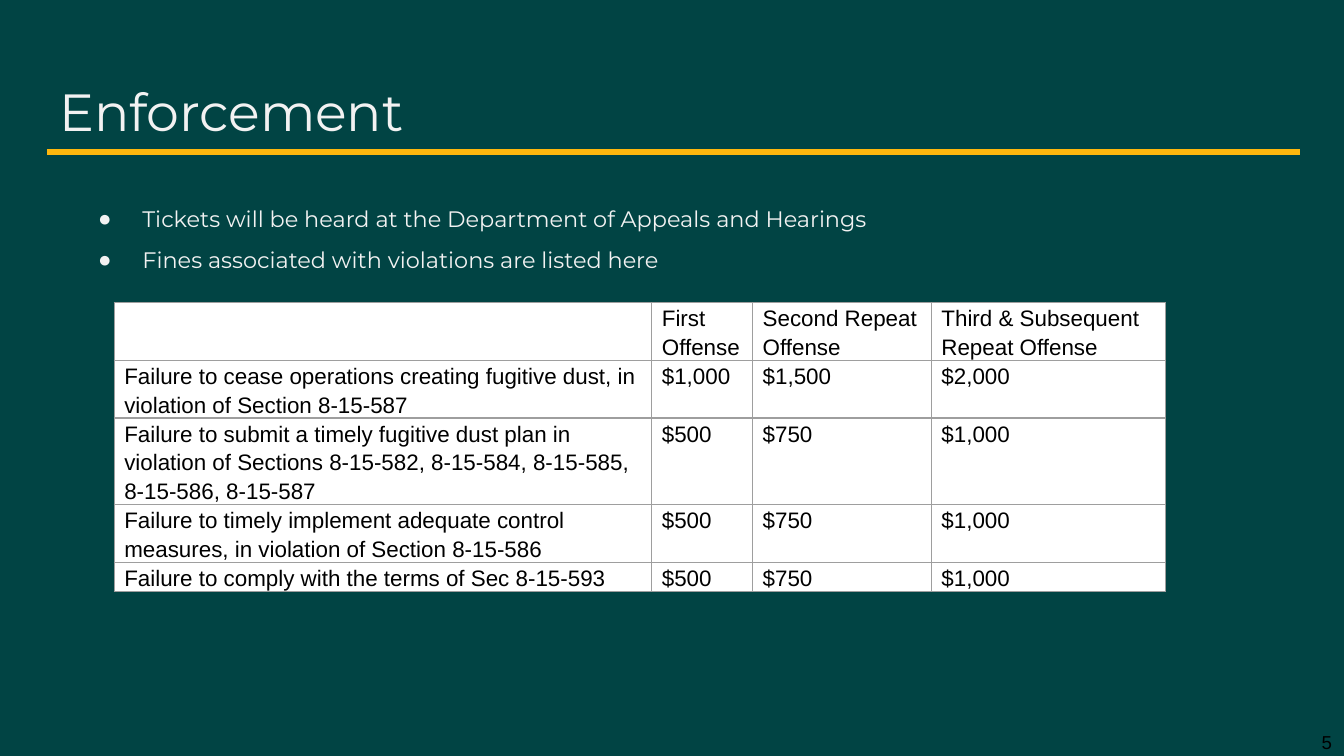
from lxml import etree
from pptx import Presentation
from pptx import util as u
from pptx.dml import color
from pptx.enum import shapes, text
from pptx.oxml import ns

COLORS = {
    "background": "014444",
    "accent": "FEB70D",
    "light": "F2F2F2",
    "dark": "000000",
    "cell": "FFFFFF",
    "border": "9E9E9E",
}
HEADING_FONT = "Montserrat"
TABLE_FONT = "Arial"

BULLETS = [
    "Tickets will be heard at the Department of Appeals and Hearings",
    "Fines associated with violations are listed here",
]
FINES = [
    ["", "First Offense", "Second Repeat Offense", "Third & Subsequent Repeat Offense"],
    ["Failure to cease operations creating fugitive dust, in violation of Section 8-15-587",
     "$1,000", "$1,500", "$2,000"],
    ["Failure to submit a timely fugitive dust plan in violation of Sections 8-15-582, "
     "8-15-584, 8-15-585, 8-15-586, 8-15-587", "$500", "$750", "$1,000"],
    ["Failure to timely implement adequate control measures, in violation of Section 8-15-586",
     "$500", "$750", "$1,000"],
    ["Failure to comply with the terms of Sec 8-15-593", "$500", "$750", "$1,000"],
]
COLUMN_WIDTHS = [4, 0.75, 1.33, 1.74]
ROW_LINES = [2, 2, 3, 2, 1]


def rgb(name):
    return color.RGBColor.from_string(COLORS[name])


def add_xml(parent, tag, **attributes):
    return etree.SubElement(parent, ns.qn(tag), **attributes)


def add_color(parent, tag, name):
    add_xml(add_xml(parent, tag), "a:srgbClr", val=COLORS[name])


def style_runs(paragraph, font_name, size, color_name):
    for run in paragraph.runs:
        run.font.name = font_name
        run.font.size = u.Pt(size)
        run.font.color.rgb = rgb(color_name)


def place(region, box, anchor):
    region.left, region.top, region.width, region.height = map(u.Inches, box)
    frame = region.text_frame
    frame.word_wrap = True
    frame.auto_size = text.MSO_AUTO_SIZE.NONE
    frame.vertical_anchor = anchor
    frame.margin_left = frame.margin_right = u.Inches(0.1)
    frame.margin_top = frame.margin_bottom = u.Inches(0.1)
    return frame


def add_heading(slide, box):
    left, top, width, height = box
    frame = place(slide.shapes.title, box, text.MSO_ANCHOR.TOP)
    frame.text = "Enforcement"
    heading = frame.paragraphs[0]
    heading.alignment = text.PP_ALIGN.LEFT
    style_runs(heading, HEADING_FONT, 28, "light")

    rule_y = u.Inches(top + height + 0.01)
    rule = slide.shapes.add_connector(
        shapes.MSO_CONNECTOR.STRAIGHT,
        u.Inches(left + 0.01), rule_y, u.Inches(left + width + 0.01), rule_y)
    rule.line.color.rgb = rgb("accent")
    rule.line.width = u.Pt(3)
    add_xml(rule._element.spPr, "a:effectLst")


def add_bullets(slide, box):
    frame = place(slide.placeholders[1], box, text.MSO_ANCHOR.TOP)
    frame.text = "\n".join(BULLETS)
    for bullet in frame.paragraphs:
        properties = bullet._p.get_or_add_pPr()
        properties.set("marL", str(u.Inches(0.5)))
        properties.set("indent", str(u.Inches(-0.33)))
        add_color(properties, "a:buClr", "light")
        add_xml(properties, "a:buFont", typeface=TABLE_FONT)
        add_xml(properties, "a:buChar", char="●")
        bullet.line_spacing = 1.5
        bullet.space_before = u.Pt(0)
        style_runs(bullet, HEADING_FONT, 12, "light")


def style_cell(cell):
    cell.margin_left = cell.margin_right = u.Pt(5.4)
    cell.margin_top = cell.margin_bottom = 0
    properties = cell._tc.get_or_add_tcPr()
    for side in ("a:lnL", "a:lnR", "a:lnT", "a:lnB"):
        add_color(add_xml(properties, side, w=str(u.Pt(0.75))), "a:solidFill", "border")
    cell.fill.solid()
    cell.fill.fore_color.rgb = rgb("cell")
    entry = cell.text_frame.paragraphs[0]
    entry.line_spacing = 1.15
    style_runs(entry, TABLE_FONT, 12, "dark")


def add_fines(slide, box):
    left, top, width, height = box
    fines = slide.shapes.add_table(
        len(FINES), len(COLUMN_WIDTHS), *map(u.Inches, box)).table
    for column, column_width in zip(fines.columns, COLUMN_WIDTHS):
        column.width = u.Inches(column_width)
    for row, lines, entries in zip(fines.rows, ROW_LINES, FINES):
        row.height = u.Inches(height * lines / sum(ROW_LINES))
        for cell, entry in zip(row.cells, entries):
            cell.text_frame.text = entry
            style_cell(cell)


def add_page_number(slide, box):
    number = slide.shapes.add_textbox(*map(u.Inches, box))
    frame = place(number, box, text.MSO_ANCHOR.MIDDLE)
    frame.text = "5"
    frame.paragraphs[0].alignment = text.PP_ALIGN.RIGHT
    style_runs(frame.paragraphs[0], TABLE_FONT, 10, "dark")


def main():
    deck = Presentation()
    deck.slide_width = u.Inches(10)
    deck.slide_height = deck.slide_width * 9 // 16
    slide = deck.slides.add_slide(deck.slide_layouts[1])
    slide.background.fill.solid()
    slide.background.fill.fore_color.rgb = rgb("background")
    add_heading(slide, (0.34, 0.49, 9.32, 0.63))
    add_page_number(slide, (9.61, 5.41, 0.4, 0.22))
    add_bullets(slide, (0.46, 1.33, 8.94, 0.94))
    add_fines(slide, (0.85, 2.25, sum(COLUMN_WIDTHS), 2.15))
    deck.save("out.pptx")


if __name__ == "__main__":
    main()
